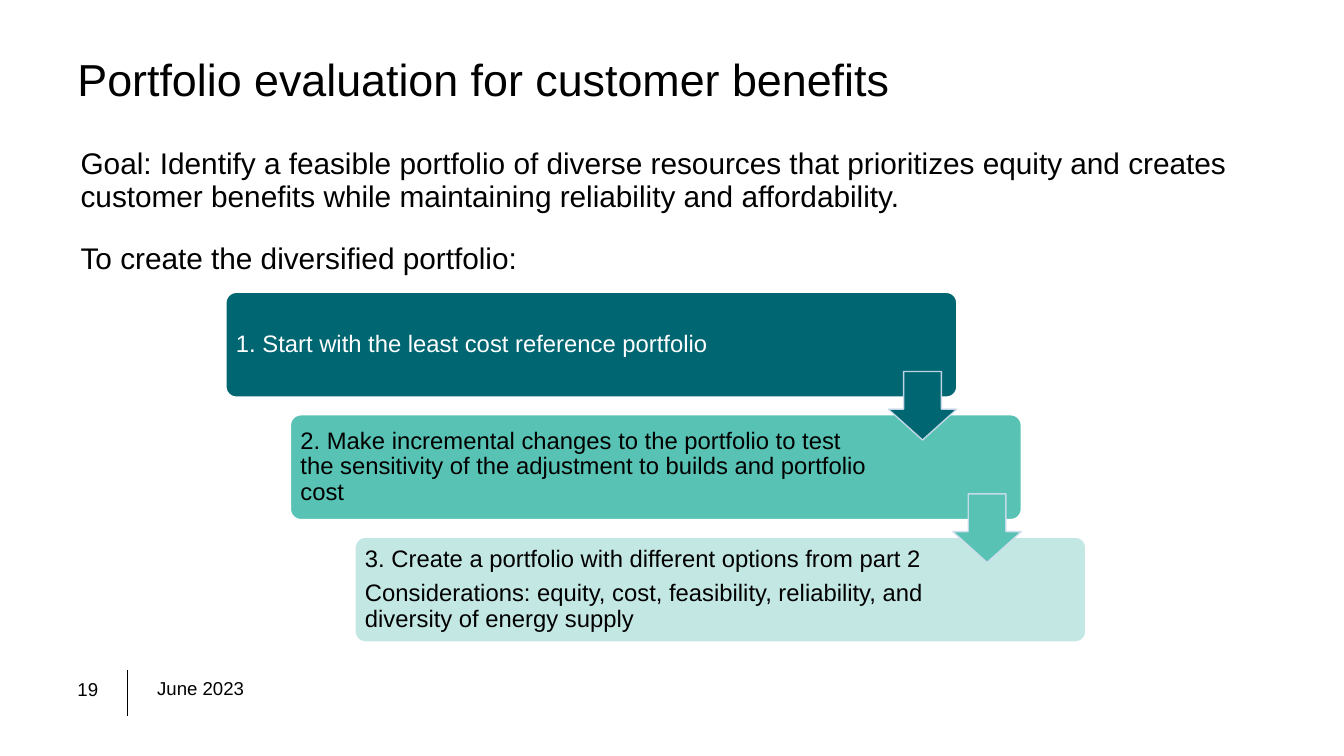
"""Build the slide on portfolio evaluation for customer benefits."""
from lxml import etree
from pptx import Presentation
from pptx.dml.color import RGBColor
from pptx.enum.shapes import MSO_CONNECTOR, MSO_SHAPE
from pptx.enum.text import MSO_ANCHOR
from pptx.oxml.ns import qn
from pptx.util import Inches, Pt

STRAIGHT = MSO_CONNECTOR.STRAIGHT
ROUND_RECT, DOWN_ARROW = MSO_SHAPE.ROUNDED_RECTANGLE, MSO_SHAPE.DOWN_ARROW
TOP, MIDDLE = MSO_ANCHOR.TOP, MSO_ANCHOR.MIDDLE

TITLE = "Portfolio evaluation for customer benefits"
BODY = [
    "Goal: Identify a feasible portfolio of diverse resources that prioritizes equity and creates "
    "customer benefits while maintaining reliability and affordability.",
    "To create the diversified portfolio:",
]
STEPS = [
    ("006671", "FFFFFF", 6.12, ["1. Start with the least cost reference portfolio"]),
    ("58C3B4", "000000", 5.87, [
        "2. Make incremental changes to the portfolio to test the sensitivity of the adjustment "
        "to builds and portfolio cost"]),
    ("C3E7E3", "000000", 5.87, [
        "3. Create a portfolio with different options from part 2",
        "Considerations: equity, cost, feasibility, reliability, and diversity of energy supply"]),
]
PAGE, DATE = "19", "June 2023"

STEP_X, STEP_Y, STEP_W, STEP_H = 2.24, 2.9, 7.25, 1.04
SHIFT_X, SHIFT_Y = 0.64, 1.215
ARROW, ARROW_DROP = 0.68, 0.785
PAD = 0.03


def rgb(color):
    return RGBColor.from_string(color)


def add_text(s, x, y, w, h, lines, size, color="000000", anchor=TOP,
             inset=(0.1, 0.05), spacing=0.9, before=0, after=0):
    tf = s.shapes.add_textbox(Inches(x), Inches(y), Inches(w), Inches(h)).text_frame
    tf.word_wrap = True
    tf.vertical_anchor = anchor
    tf.margin_left = tf.margin_right = Inches(inset[0])
    tf.margin_top = tf.margin_bottom = Inches(inset[1])
    for i, line in enumerate(lines):
        p = tf.add_paragraph() if i else tf.paragraphs[0]
        p.text = line
        p.line_spacing = spacing
        p.space_before = Pt(before if i else 0)
        p.space_after = Pt(after)
        p.font.name = "Arial"
        p.font.size = Pt(size)
        p.font.color.rgb = rgb(color)


def add_block(s, kind, x, y, w, h, fill, line, adjustments):
    sp = s.shapes.add_shape(kind, Inches(x), Inches(y), Inches(w), Inches(h))
    sp.shadow.inherit = False
    sp.fill.solid()
    sp.fill.fore_color.rgb = rgb(fill)
    sp.line.color.rgb = rgb(line)
    sp.line.width = Pt(1)
    for i, value in enumerate(adjustments):
        sp.adjustments[i] = value
    return sp


def add_steps(s):
    for i, (fill, color, text_w, lines) in enumerate(STEPS):
        x, y = STEP_X + i * SHIFT_X, STEP_Y + i * SHIFT_Y
        add_block(s, ROUND_RECT, x, y, STEP_W, STEP_H, fill, "FFFFFF", [0.1])
        add_text(s, x + PAD, y + PAD, text_w, STEP_H - 2 * PAD, lines, 17, color,
                 MIDDLE, (0.07, 0.07), after=6)
    for i, (fill, *_) in enumerate(STEPS[:-1]):
        x = STEP_X + i * SHIFT_X + STEP_W - ARROW
        y = STEP_Y + i * SHIFT_Y + ARROW_DROP
        sp = add_block(s, DOWN_ARROW, x, y, ARROW, ARROW, fill, "D2DEEF", [0.55, 0.45])
        line_color = sp.line.fill._xPr.find(qn("a:solidFill"))[0]
        etree.SubElement(line_color, qn("a:alpha")).set("val", "90000")


def add_footer(s):
    add_text(s, 0.67, 6.68, 0.56, 0.33, [PAGE], 13.3, spacing=1.0)
    add_text(s, 1.46, 6.69, 4.61, 0.33, [DATE], 13.3)
    divider = s.shapes.add_connector(STRAIGHT, Inches(1.26), Inches(6.65),
                                     Inches(1.26), Inches(7.1))
    divider.line.color.rgb = rgb("000000")
    divider.line.width = Pt(0.75)
    etree.SubElement(divider._element.spPr, qn("a:effectLst"))


def main():
    prs = Presentation()
    prs.slide_width, prs.slide_height = Inches(13.33), Inches(7.5)
    s = prs.slides.add_slide(prs.slide_layouts[6])
    add_footer(s)
    add_text(s, 0.67, 0.4, 12, 0.83, [TITLE], 32, anchor=MIDDLE)
    add_text(s, 0.67, 1.41, 12, 4.95, BODY, 21.3, inset=(0.13, 0.07), before=13.3, after=8)
    add_steps(s)
    prs.save("out.pptx")


if __name__ == "__main__":
    main()
